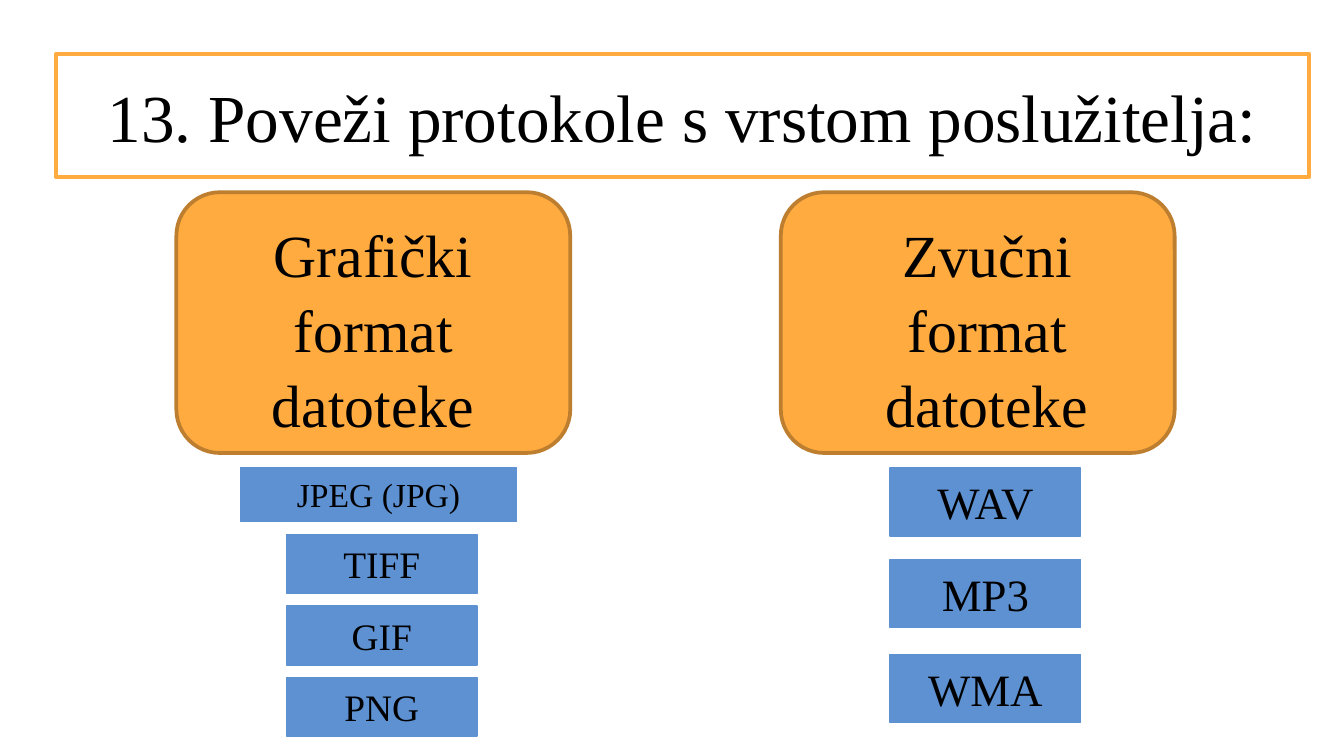
from pptx import Presentation
from pptx.dml.color import RGBColor
from pptx.enum.shapes import MSO_SHAPE as Shape
from pptx.enum.text import MSO_ANCHOR as Anchor, MSO_AUTO_SIZE as AutoSize, PP_ALIGN as Align
from pptx.util import Pt

BLACK = RGBColor(0x00, 0x00, 0x00)
ORANGE = RGBColor(0xFF, 0xAB, 0x40)
BROWN = RGBColor(0xBD, 0x7F, 0x2F)
BLUE = RGBColor(0x5D, 0x91, 0xD1)


class QuizSlide:
    font = "Times New Roman"

    def __init__(self, presentation):
        self.slide = presentation.slides.add_slide(presentation.slide_layouts[5])

    def set_text(self, shape, text, size, anchor=Anchor.TOP, line_spacing=1.0):
        frame = shape.text_frame
        frame.text = text
        frame.word_wrap = True
        frame.auto_size = AutoSize.NONE
        frame.vertical_anchor = anchor
        paragraph = frame.paragraphs[0]
        paragraph.alignment = Align.CENTER
        paragraph.line_spacing = line_spacing
        font = paragraph.runs[0].font
        font.name, font.size = self.font, Pt(size)
        font.color.rgb = BLACK

    def title(self, text, left, top, width, height):
        shape = self.slide.shapes.title
        shape.left, shape.top = Pt(left), Pt(top)
        shape.width, shape.height = Pt(width), Pt(height)
        shape.line.color.rgb = ORANGE
        shape.line.width = Pt(2.25)
        self.set_text(shape, text, 36, Anchor.MIDDLE)

    def box(self, kind, left, top, width, height, fill, line, line_width):
        shape = self.slide.shapes.add_shape(kind, Pt(left), Pt(top), Pt(width), Pt(height))
        shape.shadow.inherit = False
        shape.fill.solid()
        shape.fill.fore_color.rgb = fill
        shape.line.color.rgb = line
        shape.line.width = Pt(line_width)
        return shape

    def category(self, text, left, text_left):
        self.box(Shape.ROUNDED_RECTANGLE, left, 103, 211, 139.7, ORANGE, BROWN, 2)
        label = self.slide.shapes.add_textbox(Pt(text_left), Pt(111), Pt(193.7), Pt(123.8))
        self.set_text(label, text, 32, line_spacing=1.05)

    def answer(self, text, left, top, width, height, size):
        shape = self.box(Shape.RECTANGLE, left, top, width, height, BLUE, BLUE, 0.75)
        self.set_text(shape, text, size)


def main():
    presentation = Presentation()
    presentation.slide_width, presentation.slide_height = Pt(720), Pt(405)
    quiz = QuizSlide(presentation)

    quiz.title("13. Poveži protokole s vrstom poslužitelja:", 30.2, 28.8, 671, 66.2)
    quiz.category("Grafički format datoteke", 94.5, 103)
    quiz.category("Zvučni format datoteke", 418.3, 432)

    quiz.answer("JPEG (JPG)", 129, 250.5, 147.6, 29, 18)
    for row, text in enumerate(["TIFF", "GIF", "PNG"]):
        quiz.answer(text, 153.4, 286.5 + 38.2 * row, 102.2, 31.5, 20)
    for text, top in [("WAV", 250.8), ("MP3", 299.8), ("WMA", 350.7)]:
        quiz.answer(text, 476.8, top, 102.2, 36.3, 24)

    presentation.save("out.pptx")


if __name__ == "__main__":
    main()
